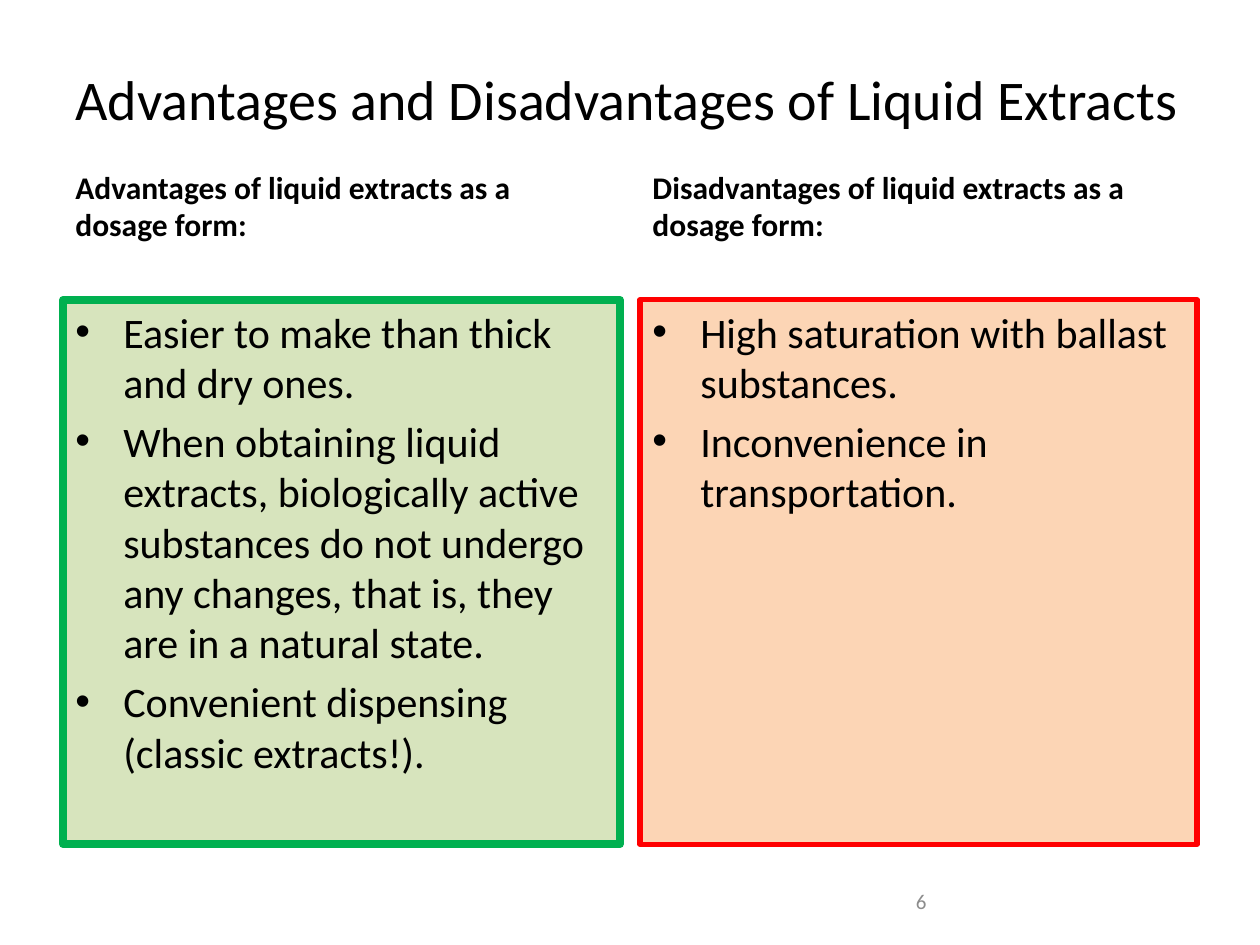
"""Build a slide weighing the pros and cons of liquid extracts."""
from dataclasses import dataclass

from lxml import etree
from pptx import Presentation
from pptx.dml.color import RGBColor
from pptx.enum.shapes import MSO_SHAPE
from pptx.enum.text import MSO_ANCHOR, PP_ALIGN
from pptx.oxml.ns import qn
from pptx.util import Inches, Pt

RECT = MSO_SHAPE.RECTANGLE
TOP, MIDDLE, BOTTOM = MSO_ANCHOR.TOP, MSO_ANCHOR.MIDDLE, MSO_ANCHOR.BOTTOM
LEFT = PP_ALIGN.LEFT


@dataclass(frozen=True)
class Theme:
    """Hold the font, colours and type sizes."""
    font: str = "Calibri"
    ink: str = "000000"
    gray: str = "8C8C8C"
    green: str = "00B050"
    mint: str = "D7E4BD"
    red: str = "FF0000"
    peach: str = "FCD5B5"
    title: int = 32
    head: int = 18
    body: int = 24
    small: int = 12


THEME = Theme()
TITLE = "Advantages and Disadvantages of Liquid Extracts"
PAGE = "6"
SIDES = [
    {
        "head": "Advantages of liquid extracts as a dosage form:",
        "items": [
            "Easier to make than thick and dry ones.",
            "When obtaining liquid extracts, biologically active substances "
            "do not undergo any changes, that is, they are in a natural state.",
            "Convenient dispensing (classic extracts!).",
        ],
        "fill": THEME.mint, "edge": THEME.green, "weight": 4.5,
    },
    {
        "head": "Disadvantages of liquid extracts as a dosage form:",
        "items": [
            "High saturation with ballast substances.",
            "Inconvenience in transportation.",
        ],
        "fill": THEME.peach, "edge": THEME.red, "weight": 3,
    },
]
MARGIN, WIDTH, GAP = 0.5, 9, 0.16
COLUMN = (WIDTH - GAP) / 2
INDENT = 0.38


def add_bullet(para):
    """Give a paragraph a hanging round bullet."""
    props = para._p.get_or_add_pPr()
    props.set("marL", str(Inches(INDENT)))
    props.set("indent", str(-Inches(INDENT)))
    etree.SubElement(props, qn("a:buFont")).set("typeface", "Arial")
    etree.SubElement(props, qn("a:buChar")).set("char", "•")


def write(shape, lines, size, color=THEME.ink, bold=False, anchor=TOP, bullet=False):
    """Fill a shape with one paragraph for each line."""
    frame = shape.text_frame
    frame.word_wrap = True
    frame.vertical_anchor = anchor
    for i, line in enumerate(lines):
        para = frame.add_paragraph() if i else frame.paragraphs[0]
        para.alignment = LEFT
        if i:
            para.space_before = Pt(size * 0.2)
        if bullet:
            add_bullet(para)
        run = para.add_run()
        run.text = line
        run.font.name = THEME.font
        run.font.size = Pt(size)
        run.font.bold = bold
        run.font.color.rgb = RGBColor.from_string(color)


def add_text(slide, box, text, size, **style):
    """Add a text box with a single paragraph."""
    shape = slide.shapes.add_textbox(*map(Inches, box))
    write(shape, [text], size, **style)


def add_panel(slide, box, side):
    """Add a framed panel with a bullet list."""
    panel = slide.shapes.add_shape(RECT, *map(Inches, box))
    panel.shadow.inherit = False
    panel.fill.solid()
    panel.fill.fore_color.rgb = RGBColor.from_string(side["fill"])
    panel.line.color.rgb = RGBColor.from_string(side["edge"])
    panel.line.width = Pt(side["weight"])
    write(panel, side["items"], THEME.body, bullet=True)


def main():
    """Lay out the slide and save it."""
    deck = Presentation()
    deck.slide_width, deck.slide_height = Inches(10), Inches(7.5)
    slide = deck.slides.add_slide(deck.slide_layouts[6])
    add_text(slide, (MARGIN, 0, WIDTH, 1.55), TITLE, THEME.title, anchor=MIDDLE)
    for i, side in enumerate(SIDES):
        left = MARGIN + i * (COLUMN + GAP)
        add_text(slide, (left, 1.28, COLUMN, 0.7), side["head"], THEME.head,
                 bold=True, anchor=BOTTOM)
        add_panel(slide, (left, 2.38, COLUMN, 4.32), side)
    add_text(slide, (7.17, 6.95, 2.33, 0.4), PAGE, THEME.small,
             color=THEME.gray, anchor=MIDDLE)
    deck.save("out.pptx")


if __name__ == "__main__":
    main()
